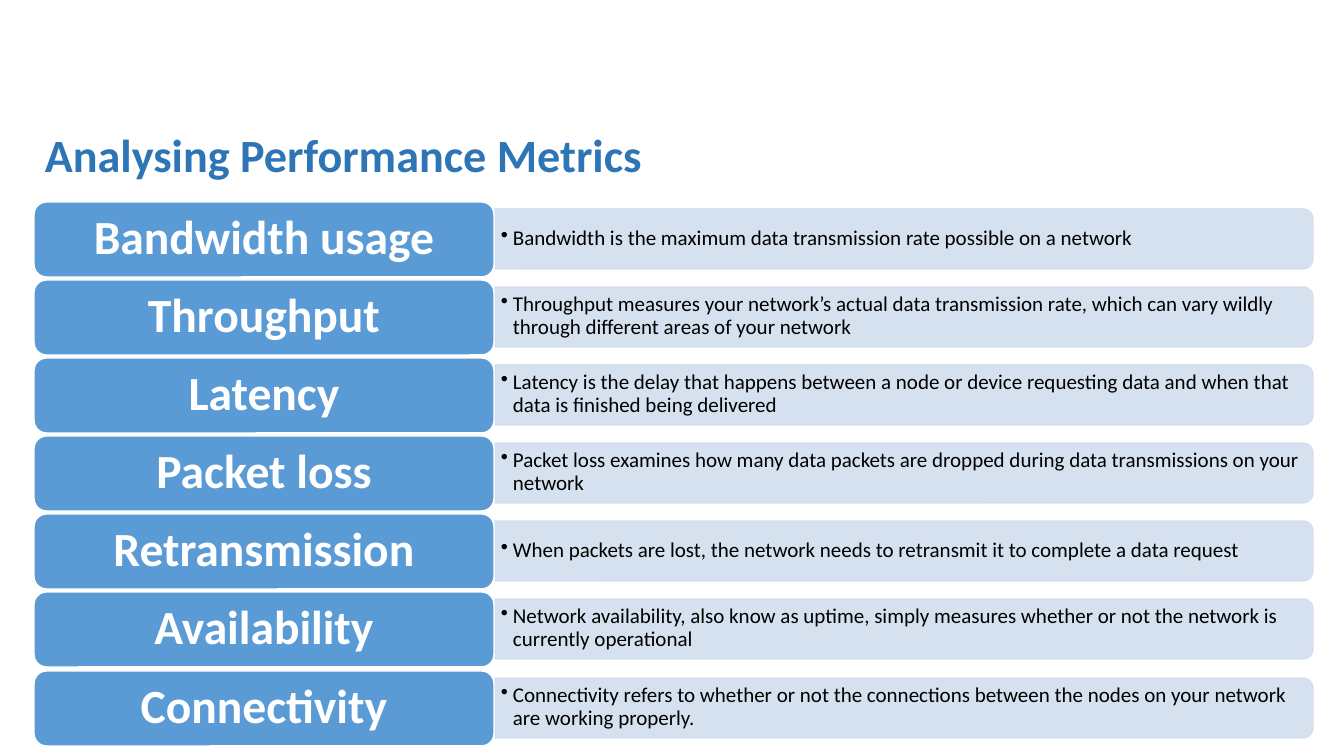
from lxml import etree
from pptx import Presentation
from pptx.dml.color import RGBColor
from pptx.enum.shapes import MSO_SHAPE
from pptx.enum.text import MSO_ANCHOR, PP_ALIGN
from pptx.oxml.ns import qn
from pptx.util import Pt

ROUNDED = MSO_SHAPE.ROUNDED_RECTANGLE
TWO_ROUNDED = MSO_SHAPE.ROUND_2_SAME_RECTANGLE
MIDDLE = MSO_ANCHOR.MIDDLE
LEFT, CENTER = PP_ALIGN.LEFT, PP_ALIGN.CENTER

PX = 914400 / 100.8
COLORS = {
    "title": "2E75B6",
    "label": "5B9BD5",
    "strip": "D2DEEF",
    "white": "FFFFFF",
    "black": "000000",
}
METRICS = [
    ("Bandwidth usage", "Bandwidth is the maximum data transmission rate possible on a network"),
    ("Throughput", "Throughput measures your network’s actual data transmission rate, "
     "which can vary wildly through different areas of your network"),
    ("Latency", "Latency is the delay that happens between a node or device requesting data "
     "and when that data is finished being delivered"),
    ("Packet loss", "Packet loss examines how many data packets are dropped "
     "during data transmissions on your network"),
    ("Retransmission", "When packets are lost, the network needs to retransmit it "
     "to complete a data request"),
    ("Availability", "Network availability, also know as uptime, simply measures "
     "whether or not the network is currently operational"),
    ("Connectivity", "Connectivity refers to whether or not the connections between the nodes "
     "on your network are working properly."),
]
FIRST_TOP, LAST_TOP = 202, 671
LABEL_LEFT, LABEL_WIDTH, LABEL_HEIGHT = 34, 460, 75
STRIP_LEFT, STRIP_LENGTH, STRIP_HEIGHT = 495, 818, 60
BULLET_INDENT = 12


def write(box, text, size, color, bold, align, inset_x, inset_y, bullet=False):
    frame = box.text_frame
    frame.word_wrap = True
    frame.vertical_anchor = MIDDLE
    frame.margin_left = frame.margin_right = round(inset_x * PX)
    frame.margin_top = frame.margin_bottom = round(inset_y * PX)
    para = frame.paragraphs[0]
    para.alignment = align
    para.line_spacing = 0.9
    if bullet:
        properties = para._p.get_or_add_pPr()
        properties.set("marL", str(round(BULLET_INDENT * PX)))
        properties.set("indent", str(round(-BULLET_INDENT * PX)))
        etree.SubElement(properties, qn("a:buChar"), char="•")
    span = para.add_run()
    span.text = text
    span.font.name = "Calibri"
    span.font.size = Pt(size)
    span.font.bold = bold
    span.font.color.rgb = RGBColor.from_string(COLORS[color])


def add_panel(kind, left, top, width, height, fill, line):
    panel = page.shapes.add_shape(kind, *[round(n * PX) for n in (left, top, width, height)])
    panel.shadow.inherit = False
    panel.fill.solid()
    panel.fill.fore_color.rgb = RGBColor.from_string(COLORS[fill])
    panel.line.color.rgb = RGBColor.from_string(COLORS[line])
    panel.line.width = Pt(1)
    return panel


deck = Presentation()
deck.slide_width = round(1344 * PX)
deck.slide_height = round(756 * PX)
page = deck.slides.add_slide(deck.slide_layouts[6])

# Title
title = page.shapes.add_textbox(*[round(n * PX) for n in (35, 108, 1278, 100)])
write(title, "Analysing Performance Metrics", 33, "title", True, LEFT, 10, 5)

# One row per metric
for index, (name, description) in enumerate(METRICS):
    top = FIRST_TOP + (LAST_TOP - FIRST_TOP) * index // (len(METRICS) - 1)

    # Strip, turned so that its rounded corners face right
    strip_top = top + 7
    shift = (STRIP_LENGTH - STRIP_HEIGHT) // 2
    strip = add_panel(TWO_ROUNDED, STRIP_LEFT + shift, strip_top - shift,
                      STRIP_HEIGHT, STRIP_LENGTH, "strip", "strip")
    strip.rotation = 90
    for color in strip._element.spPr.iter(qn("a:srgbClr")):
        etree.SubElement(color, qn("a:alpha"), val="90000")

    # Description
    box = page.shapes.add_textbox(
        *[round(n * PX) for n in (STRIP_LEFT, strip_top + 3, STRIP_LENGTH - 4, 53)])
    write(box, description, 15, "black", False, LEFT, 6, 3, bullet=True)

    # Label
    label = add_panel(ROUNDED, LABEL_LEFT, top, LABEL_WIDTH, LABEL_HEIGHT, "label", "white")
    write(label, name, 34, "white", True, CENTER, 14, 7)

deck.save("out.pptx")
